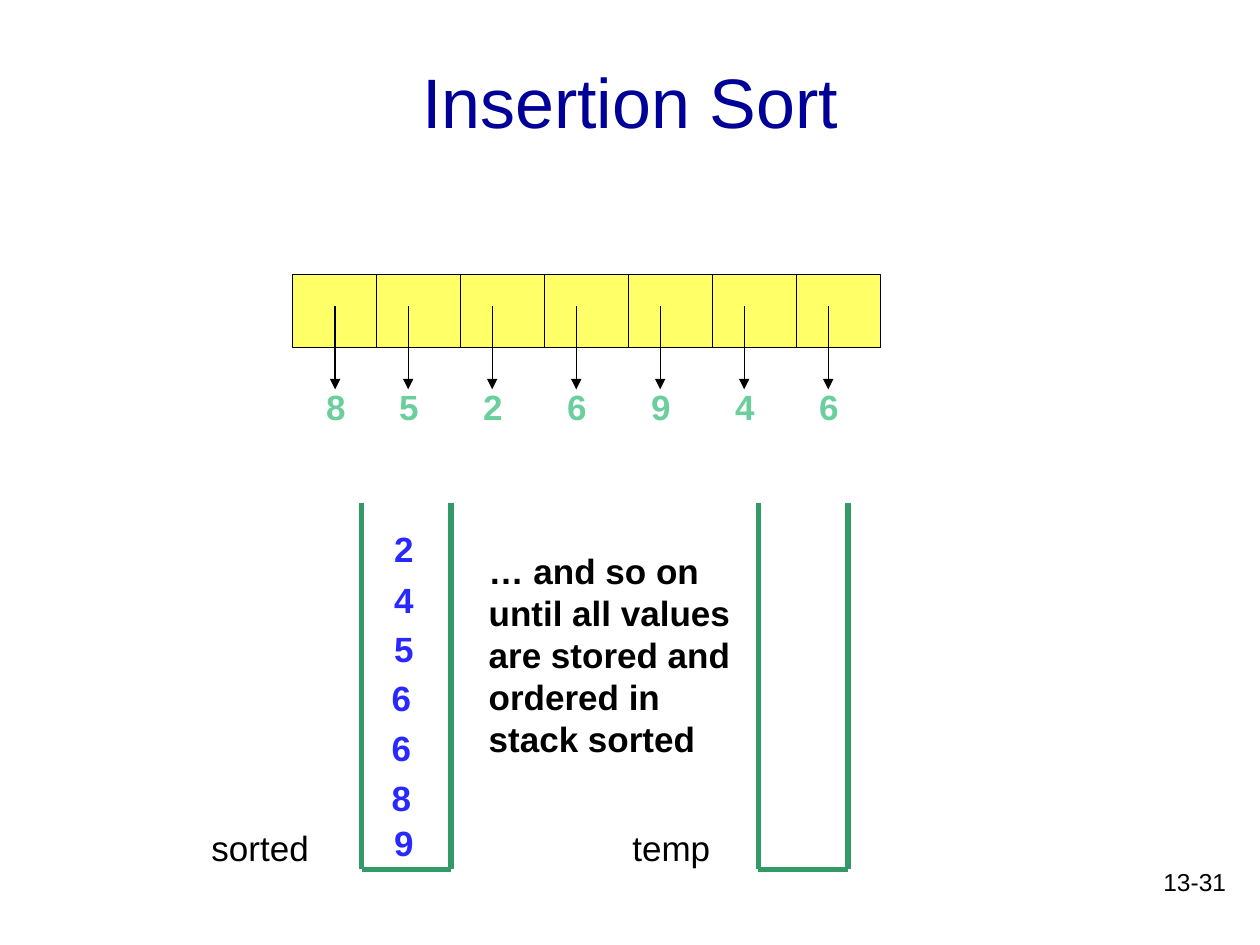
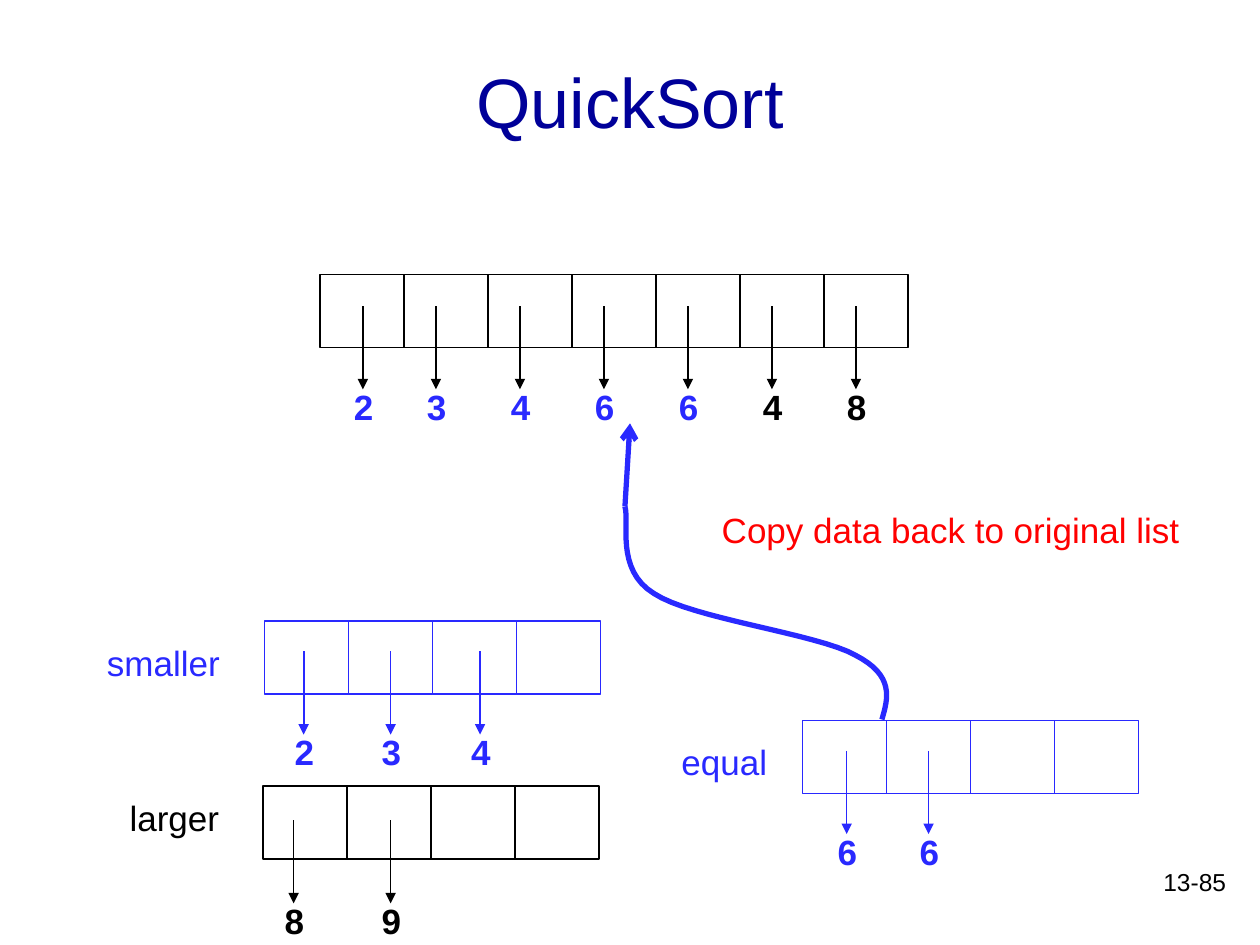
from lxml import etree
from pptx import Presentation
from pptx.dml.color import RGBColor
from pptx.enum import shapes as kinds, text as modes
from pptx.oxml import ns
from pptx.util import Inches, Pt

FONT = "Arial"
HUES = {
    "ink": "000000", "title": "000099", "cell": "FFFF67", "faded": "6BCF9D",
    "stack": "339966", "blue": "2929FF", "red": "FF0000",
}
CELL_W, CELL_H = 2 / 3, 0.58
LIST_TOP = 2.18

# Insertion sort: list values, then (value, left, top) down the sorted stack
LIST = [8, 5, 2, 6, 9, 4, 6]
SORTED = [
    (2, 3.03, 4.14), (4, 3.03, 4.54), (5, 3.03, 4.93), (6, 3.01, 5.32),
    (6, 3.01, 5.72), (8, 3.01, 6.11), (9, 3.03, 6.47),
]
# label, label left, label width, stack left
STACKS = [("sorted", 1.58, 0.98, 2.87), ("temp", 4.92, 0.82, 6.02)]
NOTE = ["… and so on", "until all values", "are stored and", "ordered in", "stack sorted"]

# Quicksort: values already copied back are blue
COPIED = [2, 3, 4, 6, 6]
REST = [4, 8]
PARTS = [
    dict(name="larger", box=(0.93, 6.27, 0.92), left=2.09, top=6.24, hue="ink", weight=1,
         items=[(8, 2.33, 6.51), (9, 3.1, 6.51)]),
    dict(name="smaller", box=(0.75, 5.04, 1.11), left=2.1, top=4.93, hue="blue", weight=1,
         items=[(2, 2.41, 5.17), (3, 3.1, 5.17), (4, 3.81, 5.17)]),
    dict(name="equal", box=(5.31, 5.83, 0.89), left=6.37, top=5.72, hue="blue", weight=0.75,
         items=[(6, 6.72, 5.96), (6, 7.37, 5.96)]),
]
# Bezier knots: each curve starts where the one before ends
START = (7, 5.71)
CURVES = [
    [(7.05, 5.54), (7.1, 5.36), (6.79, 5.2)],
    [(6.49, 5.03), (5.49, 4.91), (5.19, 4.71)],
    [(4.88, 4.52), (5, 4.14), (4.96, 4.02)],
]
TIP = (5, 3.36)


def rgb(hue):
    return RGBColor.from_string(HUES[hue])


def write(slide, words, left, top, width, height=0.44, size=20, hue="ink",
          bold=False, align="LEFT", anchor="TOP", wrap=True):
    box = slide.shapes.add_textbox(*map(Inches, (left, top, width, height)))
    frame = box.text_frame
    frame.word_wrap = wrap
    frame.vertical_anchor = modes.MSO_ANCHOR[anchor]
    frame.text = "\n".join(words) if isinstance(words, list) else str(words)
    for para in frame.paragraphs:
        para.alignment = modes.PP_ALIGN[align]
        font = para.runs[0].font
        font.name, font.size, font.bold = FONT, Pt(size), bold
        font.color.rgb = rgb(hue)


def digit(slide, value, left, top, hue):
    write(slide, value, left, top, 0.42, 0.43, hue=hue, bold=True)


def stroke(shape, hue, weight):
    shape.line.color.rgb = rgb(hue)
    shape.line.width = Pt(weight)


def line(slide, start, end, hue="ink", weight=0.75, head=None):
    link = slide.shapes.add_connector(
        kinds.MSO_CONNECTOR.STRAIGHT, *map(Inches, (*start, *end)))
    stroke(link, hue, weight)
    if head:
        etree.SubElement(link.line._get_or_add_ln(), ns.qn("a:tailEnd"), type=head)
    etree.SubElement(link._element.spPr, ns.qn("a:effectLst"))


def cells(slide, left, top, count, hue="ink", weight=0.75, fill=None):
    for i in range(count):
        cell = slide.shapes.add_shape(
            kinds.MSO_SHAPE.RECTANGLE,
            *map(Inches, (left + i * CELL_W, top, CELL_W, CELL_H)))
        cell.shadow.inherit = False
        if fill:
            cell.fill.solid()
            cell.fill.fore_color.rgb = rgb(fill)
        else:
            cell.fill.background()
        stroke(cell, hue, weight)


def point(slide, value, x, top, hue, ink="ink", weight=0.75):
    """Draw an arrow down from a cell to the value it refers to."""
    line(slide, (x, top), (x, top + 0.66), ink, weight, "triangle")
    digit(slide, value, x - 0.17, top + 0.58, hue)


def main_list(slide, left, items, fill=None):
    cells(slide, left, LIST_TOP, len(items), fill=fill)
    for i, (value, hue) in enumerate(items):
        gap = 0.92 + (i - 1) * CELL_W if i else 0.34
        point(slide, value, left + gap, LIST_TOP + 0.25, hue)


def stack(slide, left, top=3.99, base=6.9, width=0.71):
    right = left + width
    knots = [(left, top), (left, base), (right, base), (right, top)]
    for start, end in zip(knots, knots[1:]):
        line(slide, start, end, "stack", 3)


def bend(slide, start, curves, steps=16):
    """Draw a smooth open path through cubic Bezier curves."""
    dots = []
    here = start
    for a, b, end in curves:
        for i in range(1, steps + 1):
            t = i / steps
            s = 1 - t
            dots.append(tuple(
                Inches(s**3 * p + 3 * s * s * t * q + 3 * s * t * t * r + t**3 * e)
                for p, q, r, e in zip(here, a, b, end)))
        here = end
    pen = slide.shapes.build_freeform(*map(Inches, start))
    pen.add_line_segments(dots, close=False)
    path = pen.convert_to_shape()
    path.shadow.inherit = False
    path.fill.background()
    stroke(path, "blue", 3)


def page(deck, title, number):
    slide = deck.slides.add_slide(deck.slide_layouts[6])
    write(slide, number, 7.75, 6.83, 2.08, 0.5, size=14, align="RIGHT")
    write(slide, title, 0.75, 0.17, 8.5, 1.25, size=40, hue="title",
          align="CENTER", anchor="MIDDLE")
    return slide


def insertion(deck):
    slide = page(deck, "Insertion Sort", "13-31")
    main_list(slide, 2.32, [(v, "faded") for v in LIST], "cell")
    for name, left, width, edge in STACKS:
        stack(slide, edge)
        write(slide, name, left, 6.51, width, wrap=False)
    for value, left, top in SORTED:
        digit(slide, value, left, top, "blue")
    write(slide, NOTE, 3.78, 4.31, 2.21, 1.78, bold=True, wrap=False)


def quick(deck):
    slide = page(deck, "QuickSort", "13-85")
    main_list(slide, 2.54, [(v, "blue") for v in COPIED] + [(v, "ink") for v in REST])
    for part in PARTS:
        hue, weight = part["hue"], part["weight"]
        cells(slide, part["left"], part["top"], 4, hue, weight)
        write(slide, part["name"], *part["box"], hue=hue, wrap=False)
        for value, x, top in part["items"]:
            point(slide, value, x, top, hue, hue, weight)
    write(slide, "Copy data back to original list", 5.63, 3.99, 3.94, hue="red")
    bend(slide, START, CURVES)
    line(slide, CURVES[-1][-1], TIP, "blue", 3, "arrow")


def main():
    deck = Presentation()
    deck.slide_width, deck.slide_height = Inches(10), Inches(7.5)
    insertion(deck)
    quick(deck)
    deck.save("out.pptx")


if __name__ == "__main__":
    main()
